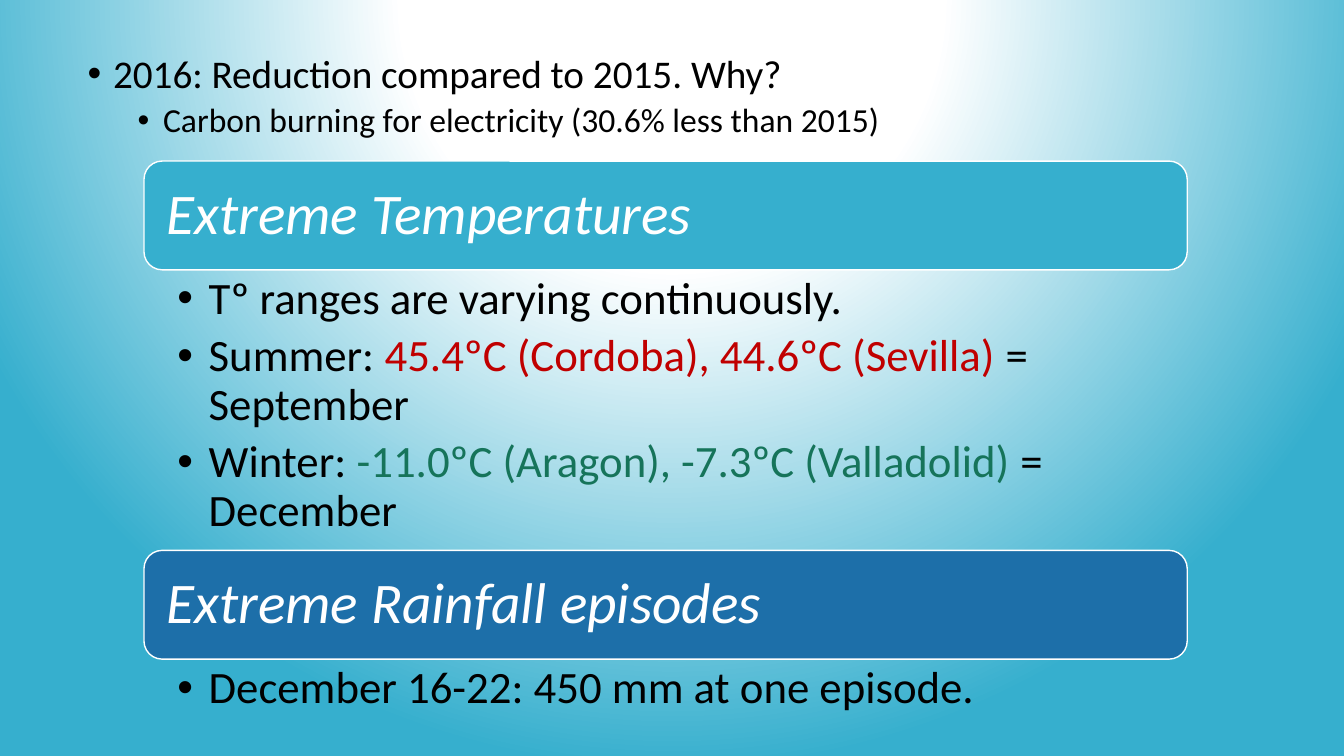
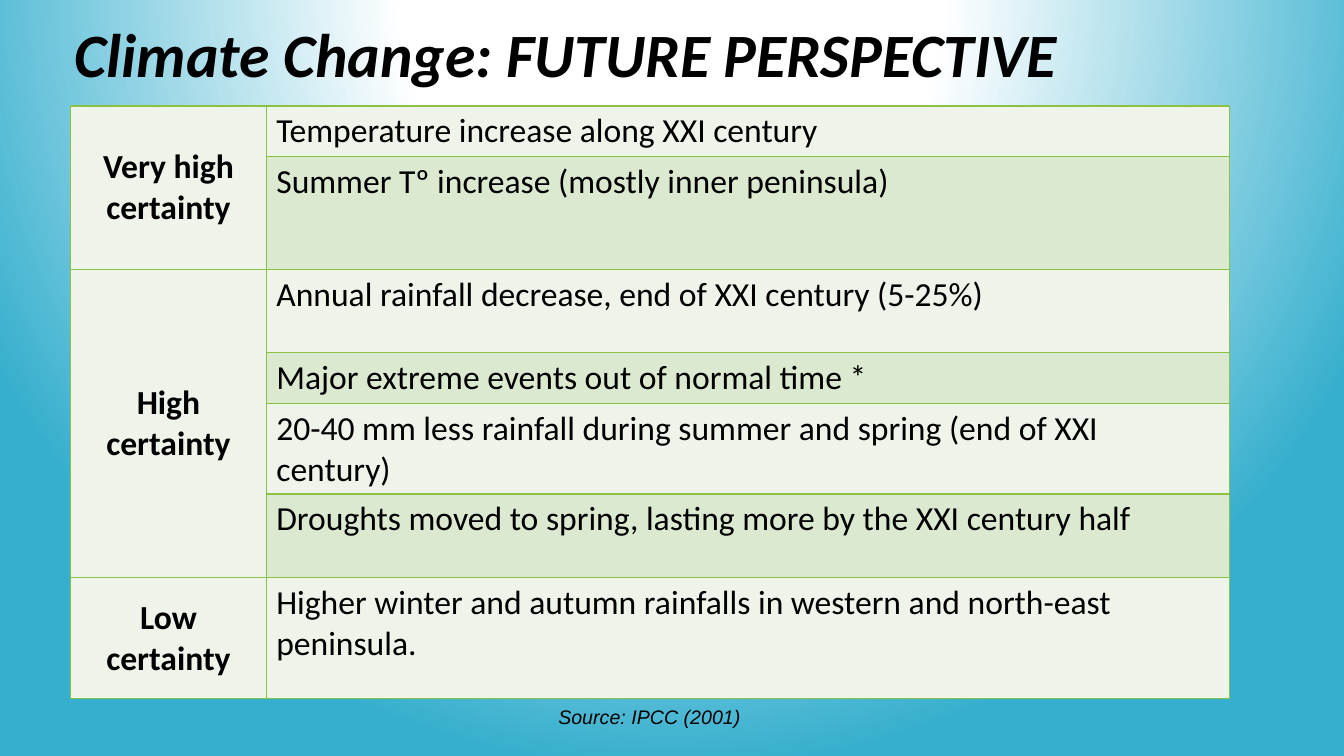
import pptx
import pptx.dml.color
import pptx.enum.shapes
import pptx.enum.text
import pptx.oxml
import pptx.oxml.ns
import pptx.util
from pptx.util import Cm

COLOURS = {
    "white": "FFFFFF",
    "black": "000000",
    "aqua": "36AFCE",
    "blue": "1D6FA9",
    "red": "C00000",
    "green": "16745A",
    "pale": "EEF4E9",
    "soft": "DAE9CF",
    "border": "8BC145",
}
BODY_FONT = "Calibri"
SOURCE_FONT = "Arial"
MIDDLE = pptx.enum.text.MSO_ANCHOR.MIDDLE
CENTRE = pptx.enum.text.PP_ALIGN.CENTER

TEMPERATURES = [
    ["Tº ranges are varying continuously."],
    ["Summer: ", ("45.4ºC (Cordoba), 44.6ºC (Sevilla) ", "red"), "= September"],
    ["Winter: ", ("-11.0ºC (Aragon), -7.3ºC (Valladolid)", "green"), " = December"],
]
RAINFALL = [["December 16-22: 450 mm at one episode."]]

# Each certainty level with its forecasts and their row heights in cm
FORECASTS = [
    ("Very high certainty", [
        ("Temperature increase along XXI century", 1.27),
        ("Summer Tº increase (mostly inner peninsula)", 2.84),
    ]),
    ("High certainty", [
        ("Annual rainfall decrease, end of XXI century (5-25%)", 2.11),
        ("Major extreme events out of normal time *", 1.27),
        ("20-40 mm less rainfall during summer and spring (end of XXI century)", 2.11),
        ("Droughts moved to spring, lasting more by the XXI century half", 2.11),
    ]),
    ("Low certainty", [
        ("Higher winter and autumn rainfalls in western and north-east peninsula.", 3.05),
    ]),
]


def colour(name):
    return pptx.dml.color.RGBColor.from_string(COLOURS[name])


def drawing_xml(body):
    """Parse one drawing element written with the prefix a."""
    tag, rest = body[:-2].split(" ", 1) if body.endswith("/>") else body.split(" ", 1)
    closing = "/>" if body.endswith("/>") else ""
    return pptx.oxml.parse_xml(f"{tag} {pptx.oxml.ns.nsdecls('a')} {rest}{closing}")


def add_text(frame, runs, size=24, font=BODY_FONT, color="black", bold=False,
             italic=False, align=None, line_spacing=None, before=None, after=None,
             bullet_indent=None, hanging=0.64):
    """Add a paragraph; runs is a string or a list of strings and (text, colour) pairs."""
    first = frame.paragraphs[0]
    paragraph = frame.add_paragraph() if first.runs else first
    paragraph.alignment = align
    paragraph.line_spacing = line_spacing
    if before is not None:
        paragraph.space_before = pptx.util.Pt(before)
    if after is not None:
        paragraph.space_after = pptx.util.Pt(after)
    if bullet_indent is not None:
        properties = paragraph._p.get_or_add_pPr()
        properties.set("marL", str(Cm(bullet_indent)))
        properties.set("indent", str(-Cm(hanging)))
        properties.append(drawing_xml('<a:buFont typeface="Arial"/>'))
        properties.append(drawing_xml('<a:buChar char="•"/>'))
    for part in [runs] if isinstance(runs, str) else runs:
        text, run_color = (part, color) if isinstance(part, str) else part
        run = paragraph.add_run()
        run.text = text
        run.font.name = font
        run.font.size = pptx.util.Pt(size)
        run.font.bold = bold
        run.font.italic = italic
        run.font.color.rgb = colour(run_color)


def set_insets(frame, left, top, right, bottom):
    frame.margin_left, frame.margin_top = Cm(left), Cm(top)
    frame.margin_right, frame.margin_bottom = Cm(right), Cm(bottom)


def add_frame(slide, left, top, width, height, wrap=True):
    box = slide.shapes.add_textbox(Cm(left), Cm(top), Cm(width), Cm(height))
    box.text_frame.word_wrap = wrap
    return box.text_frame


def set_background(master):
    """Give every slide a white glow from the top that fades to aqua."""
    master.background.fill.gradient()
    gradient = master.element.find(".//" + pptx.oxml.ns.qn("a:gradFill"))
    stops = "".join(
        f'<a:gs pos="{position * 1000}"><a:srgbClr val="{COLOURS[name]}"/></a:gs>'
        for position, name in [(0, "white"), (35, "white"), (100, "aqua")])
    gradient.getparent().replace(gradient, drawing_xml(
        f'<a:gradFill rotWithShape="1"><a:gsLst>{stops}</a:gsLst><a:path path="circle">'
        '<a:fillToRect l="50000" t="-80000" r="50000" b="180000"/></a:path></a:gradFill>'))


def add_topic(slide, left, top, width, details_height, heading, fill, details):
    """Place a rounded heading band with its bulleted details underneath."""
    band_height = 2.74
    band = slide.shapes.add_shape(pptx.enum.shapes.MSO_SHAPE.ROUNDED_RECTANGLE,
                                  Cm(left), Cm(top), Cm(width), Cm(band_height))
    band.shadow.inherit = False
    band.fill.solid()
    band.fill.fore_color.rgb = colour(fill)
    band.line.color.rgb = colour("white")
    band.line.width = pptx.util.Pt(1)
    band.text_frame.word_wrap = True
    band.text_frame.vertical_anchor = MIDDLE
    set_insets(band.text_frame, 0.43, 0.43, 0.43, 0.43)
    add_text(band.text_frame, heading, size=41, color="white", italic=True,
             align=pptx.enum.text.PP_ALIGN.LEFT, line_spacing=0.9)

    frame = add_frame(slide, left, top + band_height, width, details_height)
    set_insets(frame, 0.84, 0.15, 0.81, 0.15)
    for runs in details:
        add_text(frame, runs, size=32, line_spacing=0.9, after=6.4,
                 bullet_indent=0.79, hanging=0.79)


def style_cell(cell, fill):
    cell.fill.solid()
    cell.fill.fore_color.rgb = colour(fill)
    properties = cell._tc.get_or_add_tcPr()
    for index, side in enumerate("LRTB"):
        properties.insert(index, drawing_xml(
            f'<a:ln{side} w="12700"><a:solidFill><a:srgbClr val="{COLOURS["border"]}"/>'
            f'</a:solidFill></a:ln{side}>'))


def add_forecast_table(slide, left, top, column_widths):
    rows = [row for _, forecasts in FORECASTS for row in forecasts]
    table = slide.shapes.add_table(
        len(rows), 2, Cm(left), Cm(top), Cm(sum(column_widths)),
        Cm(sum(height for _, height in rows))).table
    table.first_row = table.horz_banding = False
    for column, width in zip(table.columns, column_widths):
        column.width = Cm(width)
    for index, (text, height) in enumerate(rows):
        table.rows[index].height = Cm(height)
        style_cell(table.cell(index, 0), "pale")
        style_cell(table.cell(index, 1), "soft" if index % 2 else "pale")
        add_text(table.cell(index, 1).text_frame, text)
    start = 0
    for certainty, forecasts in FORECASTS:
        label = table.cell(start, 0)
        if len(forecasts) > 1:
            label.merge(table.cell(start + len(forecasts) - 1, 0))
        label.vertical_anchor = MIDDLE
        add_text(label.text_frame, certainty, bold=True, align=CENTRE)
        start += len(forecasts)


def build_extremes_slide(slide):
    frame = add_frame(slide, 1.96, 1.24, 29.21, 2.8)
    add_text(frame, "2016: Reduction compared to 2015. Why?", size=28,
             line_spacing=0.9, before=10, bullet_indent=0.64)
    add_text(frame, "Carbon burning for electricity (30.6% less than 2015)",
             line_spacing=0.9, before=5, bullet_indent=1.9)
    add_topic(slide, 3.63, 4.06, 26.29, 7.06, "Extreme Temperatures", "aqua", TEMPERATURES)
    add_topic(slide, 3.63, 13.87, 26.29, 1.88, "Extreme Rainfall episodes", "blue", RAINFALL)


def build_perspective_slide(slide):
    title = add_frame(slide, 1.63, 0.05, 29.21, 2.82)
    title.vertical_anchor = MIDDLE
    add_text(title, "Climate Change: FUTURE PERSPECTIVE", size=44, bold=True,
             italic=True, line_spacing=0.9)
    add_forecast_table(slide, 1.78, 2.67, [4.93, 24.28])
    source = add_frame(slide, 13.82, 17.63, 5.13, 0.86, wrap=False)
    add_text(source, "Source: IPCC (2001)", size=14, font=SOURCE_FONT, italic=True)


def main():
    presentation = pptx.Presentation()
    presentation.slide_width, presentation.slide_height = Cm(33.87), Cm(19.05)
    set_background(presentation.slide_master)
    blank_layout = presentation.slide_layouts[6]
    for build in (build_extremes_slide, build_perspective_slide):
        build(presentation.slides.add_slide(blank_layout))
    presentation.save("out.pptx")


if __name__ == "__main__":
    main()
